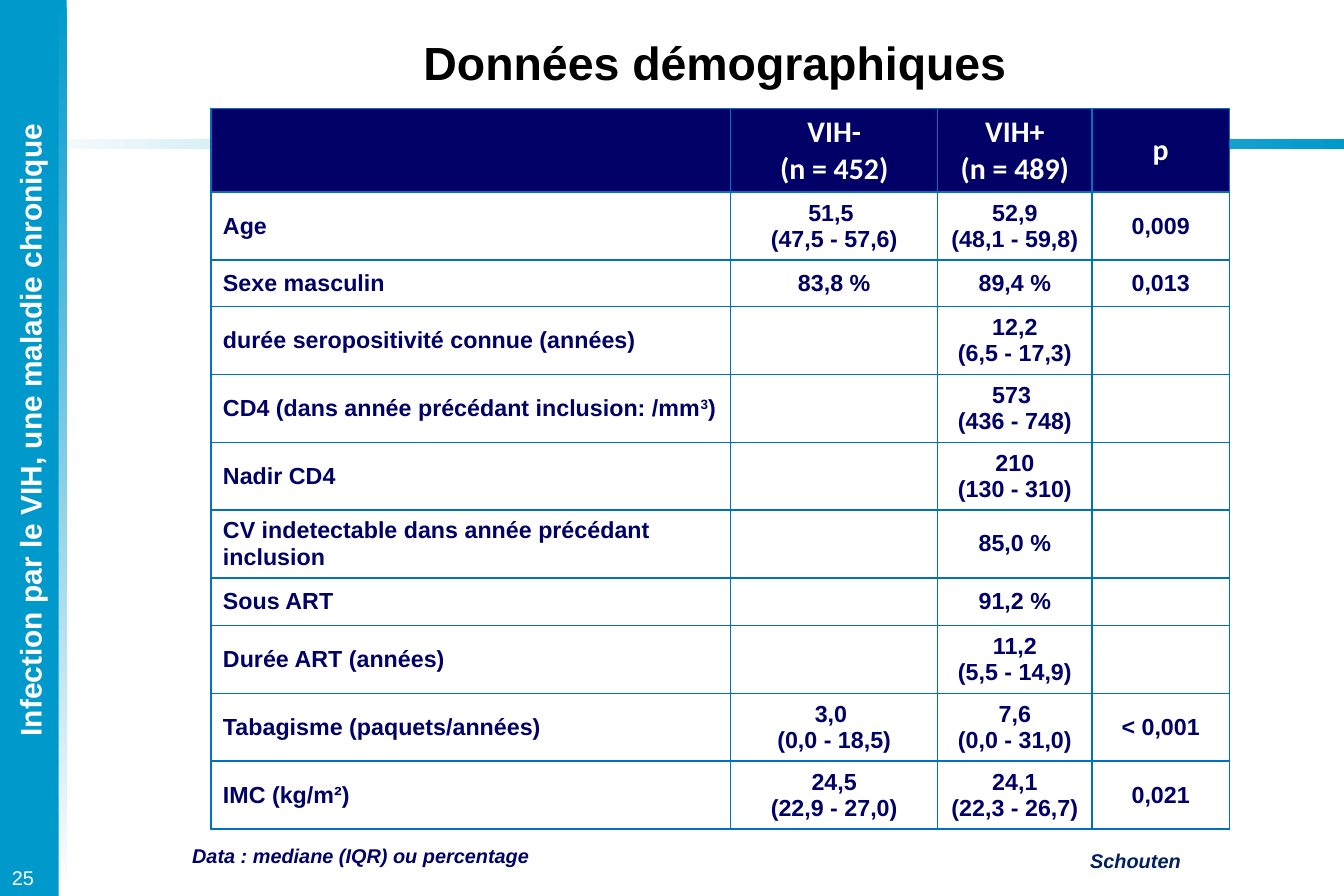
from lxml import etree
from pptx import Presentation
from pptx.dml.color import RGBColor
from pptx.enum.shapes import MSO_SHAPE
from pptx.enum.text import MSO_ANCHOR, PP_ALIGN
from pptx.oxml.ns import qn
from pptx.util import Pt

PX = 7620
RECTANGLE = MSO_SHAPE.RECTANGLE
LEFT, CENTER, RIGHT = PP_ALIGN.LEFT, PP_ALIGN.CENTER, PP_ALIGN.RIGHT
TOP, MIDDLE = MSO_ANCHOR.TOP, MSO_ANCHOR.MIDDLE
BLUE, WHITE, BLACK, NAVY = "0099CC", "FFFFFF", "000000", "000066"
BORDER, CREDIT = "0070C0", "002060"

COLUMN_WIDTHS = [522, 208, 155, 138]
HEADER_HEIGHT, ROW_HEIGHT, SHORT_ROW_HEIGHT = 84, 68, 47
SHORT_ROWS = ("Sexe masculin", "Sous ART")
ROWS = [
    ("", "VIH-\n(n = 452)", "VIH+\n(n = 489)", "p"),
    ("Age", "51,5 \n(47,5 - 57,6)", "52,9\n(48,1 - 59,8)", "0,009"),
    ("Sexe masculin", "83,8 %", "89,4 %", "0,013"),
    ("durée seropositivité connue (années)", "", "12,2\n(6,5 - 17,3)", ""),
    ("CD4 (dans année précédant inclusion: /mm^3^)", "", "573 \n(436 - 748)", ""),
    ("Nadir CD4", "", "210\n(130 - 310)", ""),
    ("CV indetectable dans année précédant inclusion", "", "85,0 %", ""),
    ("Sous ART", "", "91,2 %", ""),
    ("Durée ART (années)", "", "11,2\n(5,5 - 14,9)", ""),
    ("Tabagisme (paquets/années)", "3,0 \n(0,0 - 18,5)", "7,6\n(0,0 - 31,0)", "< 0,001"),
    ("IMC (kg/m²)", "24,5\n(22,9 - 27,0)", "24,1\n(22,3 - 26,7)", "0,021"),
]


def color(value):
    return RGBColor.from_string(value)


def emu(*lengths):
    return [length * PX for length in lengths]


def write(frame, text, size=14, fill=NAVY, font="Arial", bold=True, italic=False, align=LEFT):
    paragraph = frame.paragraphs[0]
    paragraph.alignment = align
    for line_number, line in enumerate(text.split("\n")):
        if line_number:
            paragraph.add_line_break()
        for part_number, part in enumerate(line.split("^")):
            run = paragraph.add_run()
            run.text = part
            run.font.size = Pt(size)
            run.font.name = font
            run.font.bold = bold
            run.font.italic = italic
            run.font.color.rgb = color(fill)
            if part_number % 2:
                run.font._element.set("baseline", "30000")


def add_text(slide, box, text, margins=(12, 6, 12, 6), wrap=True, anchor=TOP, rotation=0, **style):
    shape = slide.shapes.add_textbox(*emu(*box))
    shape.rotation = rotation
    frame = shape.text_frame
    frame.word_wrap = wrap
    frame.vertical_anchor = anchor
    frame.margin_left, frame.margin_top, frame.margin_right, frame.margin_bottom = emu(*margins)
    write(frame, text, **style)


def add_bar(slide, box, colors, angle=0):
    shape = slide.shapes.add_shape(RECTANGLE, *emu(*box))
    shape.shadow.inherit = False
    shape.line.fill.background()
    if len(colors) == 1:
        shape.fill.solid()
        shape.fill.fore_color.rgb = color(colors[0])
        return
    shape.fill.gradient()
    shape.fill.gradient_angle = angle
    for stop, value in zip(shape.fill.gradient_stops, colors):
        stop.color.rgb = color(value)


def add_side_band(slide, box):
    left, top, width, height = box
    add_bar(slide, (left + 8, top, width, height), [BLUE, WHITE], angle=270)
    add_bar(slide, box, [BLUE])
    title_width, title_height = 646, 48
    title_box = (left + 30 - title_width // 2, top + 408, title_width, title_height)
    add_text(slide, title_box, "Infection par le VIH, une maladie chronique",
             wrap=False, rotation=270, size=18, fill=WHITE, align=CENTER)
    add_text(slide, (left, top + height - 36, 76, 36), "25", size=12, fill=WHITE, bold=False)


def add_borders(cell):
    properties = cell._tc.get_or_add_tcPr()
    for position, side in enumerate(("lnL", "lnR", "lnT", "lnB")):
        line = etree.Element(qn(f"a:{side}"), w="12700")
        solid = etree.SubElement(line, qn("a:solidFill"))
        etree.SubElement(solid, qn("a:srgbClr"), val=BORDER)
        properties.insert(position, line)


def row_height(index, label):
    if index == 0:
        return HEADER_HEIGHT
    return SHORT_ROW_HEIGHT if label in SHORT_ROWS else ROW_HEIGHT


def add_data_table(slide, left, top):
    heights = [row_height(index, row[0]) for index, row in enumerate(ROWS)]
    box = emu(left, top, sum(COLUMN_WIDTHS), sum(heights))
    table = slide.shapes.add_table(len(ROWS), len(COLUMN_WIDTHS), *box).table
    table.first_row = table.horz_banding = False
    for column, width in zip(table.columns, COLUMN_WIDTHS):
        column.width = width * PX
    for row_index, texts in enumerate(ROWS):
        table.rows[row_index].height = heights[row_index] * PX
        for column_index, text in enumerate(texts):
            cell = table.cell(row_index, column_index)
            cell.vertical_anchor = MIDDLE
            style = {"align": CENTER if column_index else LEFT}
            if row_index == 0:
                cell.fill.solid()
                cell.fill.fore_color.rgb = color(NAVY)
                style.update(size=18, fill=WHITE, font="Calibri")
            else:
                cell.fill.background()
            add_borders(cell)
            if text:
                write(cell.text_frame, text, **style)


def add_footer(slide, left, top):
    add_text(slide, (left, top, 407, 30), "Data : mediane (IQR) ou percentage",
             margins=(0, 0, 0, 6), size=12, italic=True)
    add_text(slide, (left + 889, top, 116, 36), "Schouten", wrap=False,
             size=12, fill=CREDIT, italic=True, align=RIGHT)


def main():
    presentation = Presentation()
    presentation.slide_width, presentation.slide_height = emu(1350, 900)
    slide = presentation.slides.add_slide(presentation.slide_layouts[6])
    add_bar(slide, (0, 140, 1350, 10), [WHITE, BLUE])
    add_side_band(slide, (0, 0, 59, 900))
    add_text(slide, (184, 26, 1068, 73), "Données démographiques",
             anchor=MIDDLE, size=28, fill=BLACK, align=CENTER)
    add_data_table(slide, 212, 109)
    add_footer(slide, 193, 847)
    presentation.save("out.pptx")


if __name__ == "__main__":
    main()
